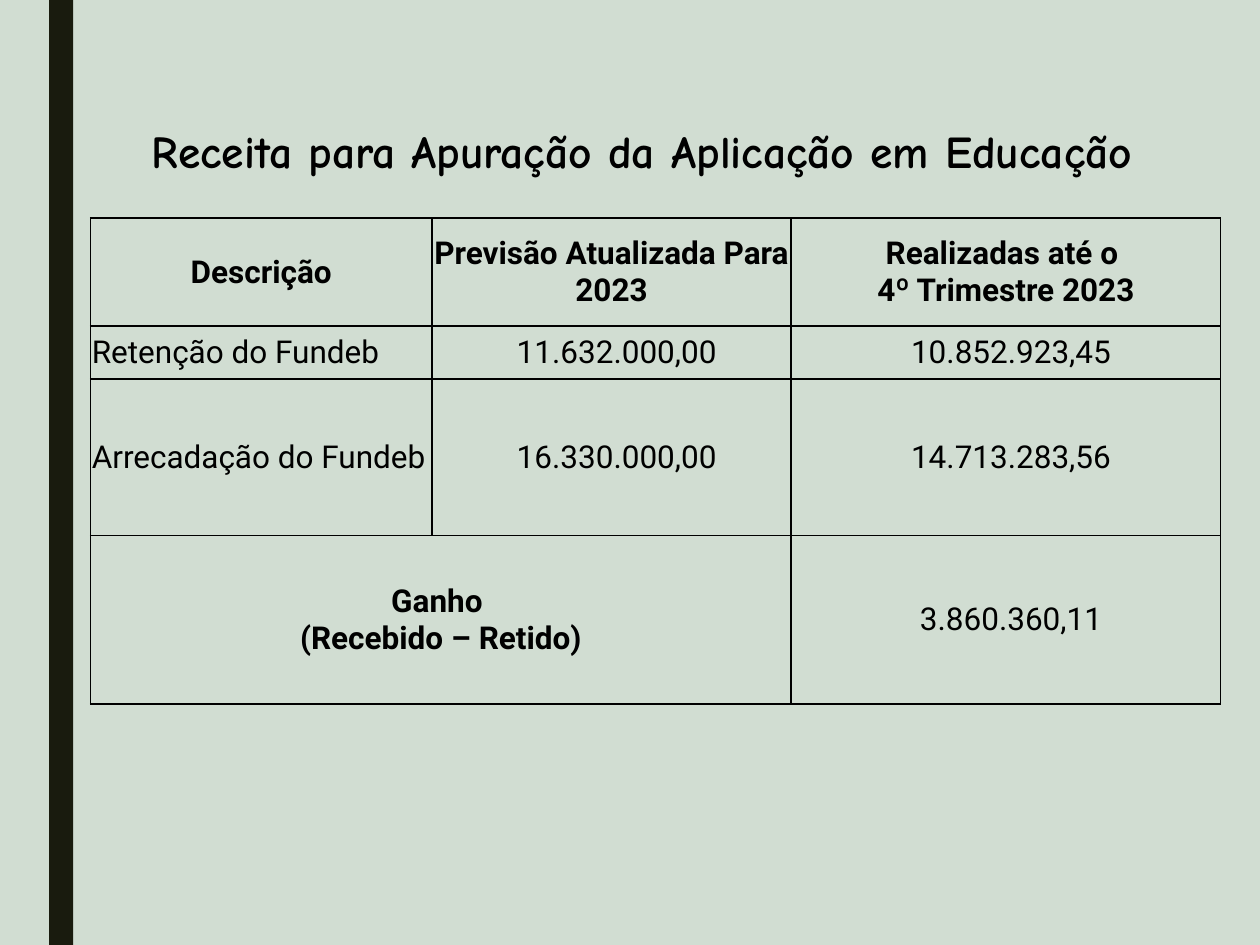
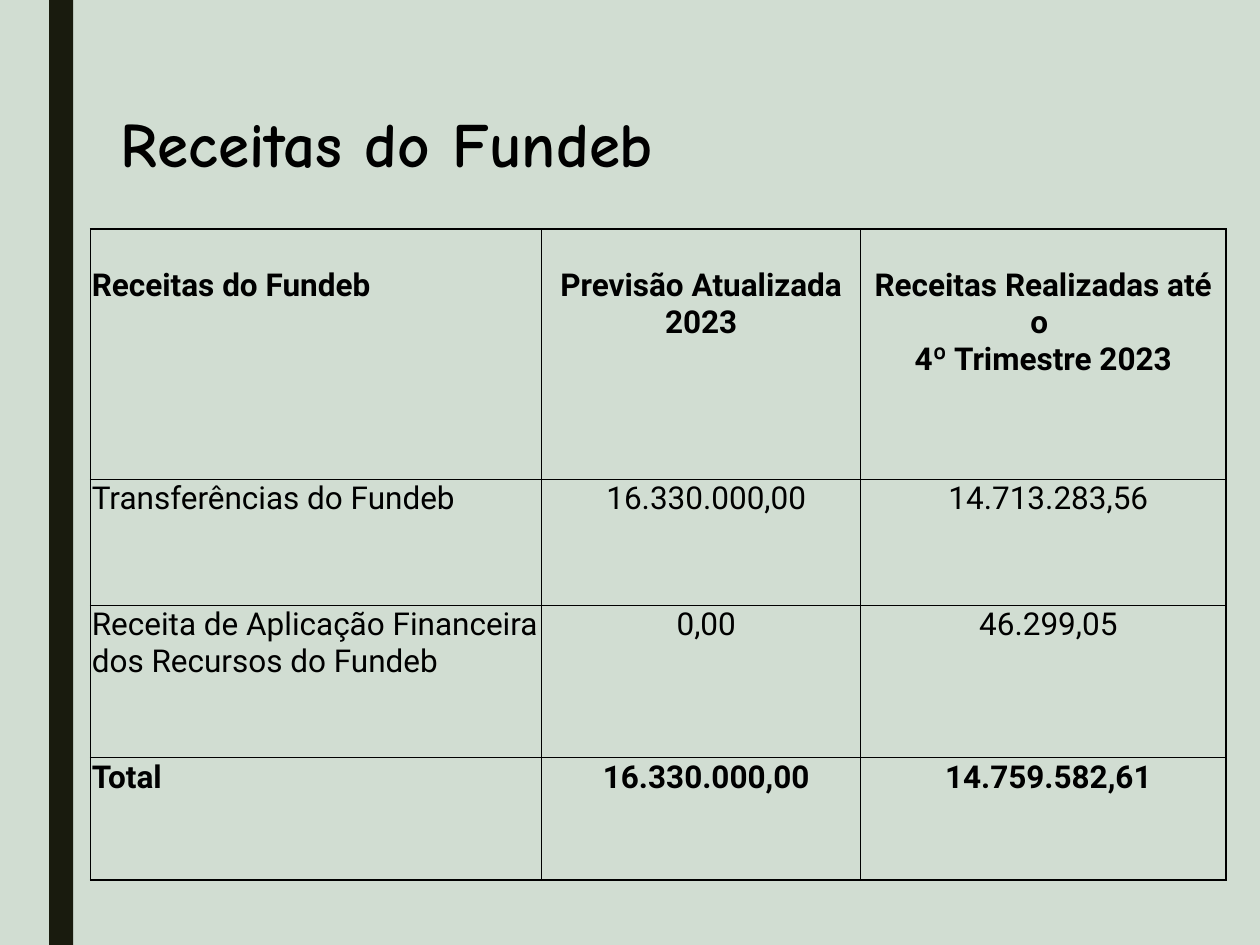
from lxml import etree
from pptx import Presentation
from pptx.dml.color import RGBColor
from pptx.enum.shapes import MSO_SHAPE
from pptx.enum.text import MSO_ANCHOR, MSO_AUTO_SIZE, PP_ALIGN
from pptx.oxml.ns import qn
from pptx.util import Pt

LEFT, CENTER = PP_ALIGN.LEFT, PP_ALIGN.CENTER
TOP, MIDDLE = MSO_ANCHOR.TOP, MSO_ANCHOR.MIDDLE
RECTANGLE = MSO_SHAPE.RECTANGLE
NO_AUTOFIT = MSO_AUTO_SIZE.NONE

TITLE_FONT, TABLE_FONT = "Comic Neue", "Roboto"
BACKGROUND, BAND, INK = "D1DDD2", "191B0E", "000000"
TABLE_SIZE = 18
HEADER_GAP = 21.1  # one line of table text
TITLE_ONLY = 5
BAND_ID = 20

APURACAO_ROWS = [
    ["Descrição", "Previsão Atualizada Para 2023", "Realizadas até o \n4º Trimestre 2023"],
    ["Retenção do Fundeb", "11.632.000,00", "10.852.923,45"],
    ["Arrecadação do Fundeb", "16.330.000,00", "14.713.283,56"],
    ["Ganho \n(Recebido – Retido)", "", "3.860.360,11"],
]
FUNDEB_ROWS = [
    ["Receitas do Fundeb", "Previsão Atualizada 2023",
     "Receitas Realizadas até o \n4º Trimestre 2023"],
    ["Transferências do Fundeb", "16.330.000,00", "14.713.283,56"],
    ["Receita de Aplicação Financeira dos Recursos do Fundeb", "0,00", "46.299,05"],
    ["Total", "16.330.000,00", "14.759.582,61"],
]


def color(hex_code):
    return RGBColor.from_string(hex_code)


def style_master(deck, page):
    """Give the master its background and the vertical band at the left."""
    master = deck.slide_master
    fill = master.background.fill
    fill.solid()
    fill.fore_color.rgb = color(BACKGROUND)
    band = page.shapes.add_shape(RECTANGLE, Pt(28.1), 0, Pt(13.7), deck.slide_height)
    band.shadow.inherit = False
    band.fill.solid()
    band.fill.fore_color.rgb = color(BAND)
    band.line.fill.background()
    band.element.nvSpPr.cNvPr.set("id", str(BAND_ID))
    master.shapes.element.insert(2, band.element)


def style_paragraph(para, font_name, size, bold, align):
    para.alignment = align
    font = para.font
    font.name, font.size, font.bold = font_name, Pt(size), bold
    font.color.rgb = color(INK)


def add_title(page, text, box, size, align):
    title = page.shapes.title
    title.left, title.top, title.width, title.height = (Pt(length) for length in box)
    frame = title.text_frame
    frame.text = text
    frame.auto_size = NO_AUTOFIT
    frame.vertical_anchor = MIDDLE
    style_paragraph(frame.paragraphs[0], TITLE_FONT, size, True, align)


def add_borders(cell):
    properties = cell._tc.get_or_add_tcPr()
    for side in ("a:lnL", "a:lnR", "a:lnT", "a:lnB"):
        line = etree.SubElement(properties, qn(side), w=str(Pt(1)))
        fill = etree.SubElement(line, qn("a:solidFill"))
        etree.SubElement(fill, qn("a:srgbClr"), val=INK)


def fill_cell(cell, text, bold, align, anchor, left_inset):
    cell.margin_left, cell.margin_right = Pt(left_inset), Pt(0.7)
    cell.margin_top, cell.margin_bottom = Pt(0.7), 0
    cell.vertical_anchor = anchor
    add_borders(cell)
    cell.fill.background()
    cell.text = text
    for para in cell.text_frame.paragraphs:
        style_paragraph(para, TABLE_FONT, TABLE_SIZE, bold, align)


def add_money_table(page, rows, origin, widths, heights, anchor, bold_cells):
    """Draw labels at the left and centred amounts; bold_cells adds to the header."""
    left, top = origin
    frame = page.shapes.add_table(len(heights), len(widths), Pt(left), Pt(top),
                                  Pt(sum(widths)), Pt(sum(heights)))
    table = frame.table
    table.first_row = table.horz_banding = False
    for column, width in zip(table.columns, widths):
        column.width = Pt(width)
    for row, height in zip(table.rows, heights):
        row.height = Pt(height)
    for i, texts in enumerate(rows):
        for j, text in enumerate(texts):
            bold = i == 0 or (i, j) in bold_cells
            align = CENTER if j else LEFT
            inset = 6.5 if i and j else 0.7
            fill_cell(table.cell(i, j), text, bold, align, anchor, inset)
    return table


def build_apuracao(page):
    add_title(page, "Receita para Apuração da Aplicação em Educação",
              (29.5, 57.6, 675.4, 56.2), 26, CENTER)
    table = add_money_table(page, APURACAO_ROWS, (51.8, 124.5), (195.1, 205.2, 245.5),
                            (61.9, 30.2, 89.3, 96.5), MIDDLE, {(3, 0)})
    gain = table.cell(3, 0)
    gain.merge(table.cell(3, 1))
    for cell in (table.cell(0, 0), gain):
        for para in cell.text_frame.paragraphs:
            para.alignment = CENTER


def build_receitas(page):
    add_title(page, "Receitas do Fundeb", (61.9, 50.4, 618.5, 61.9), 36, LEFT)
    table = add_money_table(page, FUNDEB_ROWS, (51.8, 131), (257.8, 182.2, 208.8),
                            (143, 72, 87, 70), TOP, {(3, 0), (3, 1), (3, 2)})
    for cell in table.rows[0].cells:
        cell.margin_top = Pt(0.7 + HEADER_GAP)


def main():
    deck = Presentation()
    deck.slide_width, deck.slide_height = Pt(720), Pt(540)
    layout = deck.slide_layouts[TITLE_ONLY]
    pages = [deck.slides.add_slide(layout) for _ in range(2)]
    style_master(deck, pages[0])
    build_apuracao(pages[0])
    build_receitas(pages[1])
    deck.save("out.pptx")


if __name__ == "__main__":
    main()
